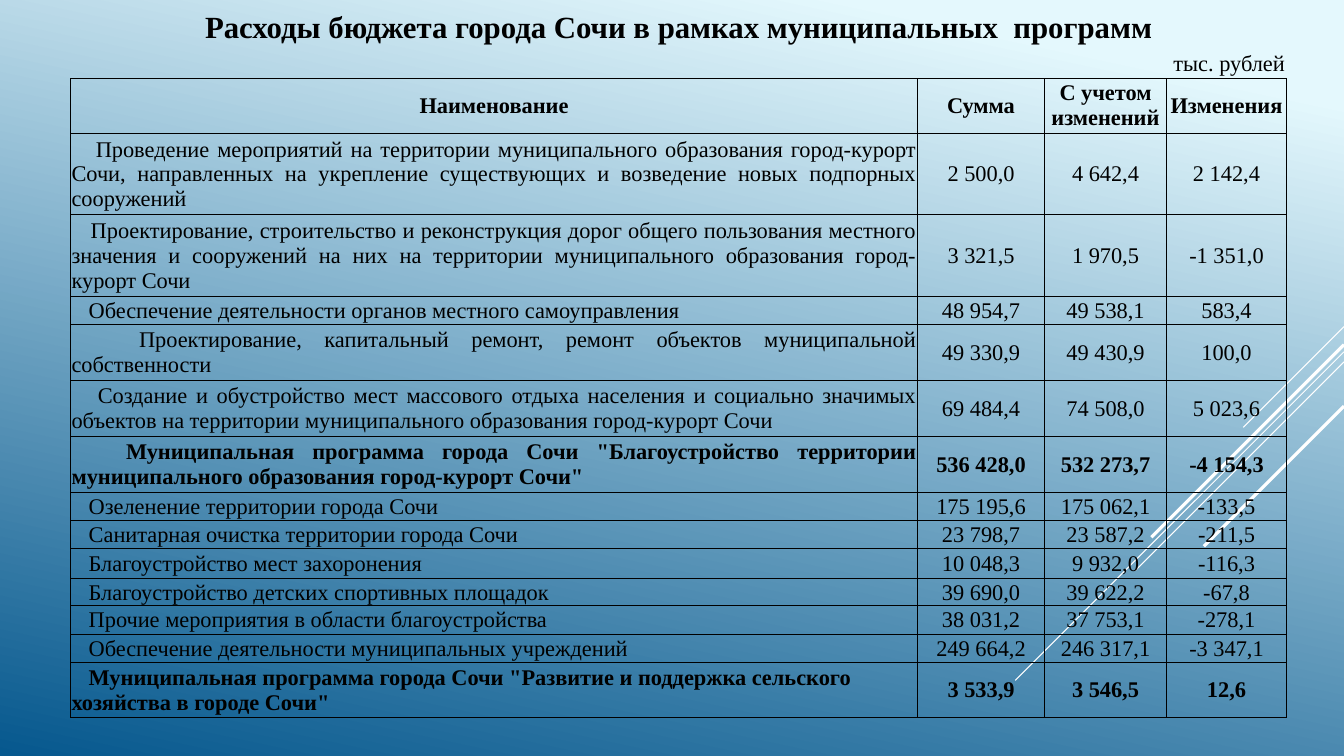
from lxml.etree import SubElement
from pptx import Presentation
from pptx.dml.color import RGBColor
from pptx.enum.shapes import MSO_CONNECTOR
from pptx.enum.text import MSO_ANCHOR, MSO_AUTO_SIZE, PP_ALIGN
from pptx.oxml import parse_xml
from pptx.oxml.ns import nsdecls, qn
from pptx.util import Inches, Pt

PAGE_WIDTH, PAGE_HEIGHT = 13.33, 7.5
FONT = "Times New Roman"
BLACK, WHITE = "000000", "FFFFFF"
LEFT, CENTER, JUSTIFY = PP_ALIGN.LEFT, PP_ALIGN.CENTER, PP_ALIGN.JUSTIFY

# Diagonal streaks: start height on the right edge, run, line width
STREAKS = [(3.24, 1, 0.75), (3.49, 3.26, 0.75), (3.59, 2.07, 0.75),
           (3.42, 1.91, 2.25), (4.03, 1.39, 2.25)]

COLUMN_WIDTHS = [8.4, 1.26, 1.21, 1.19]
HEADERS = ["Наименование", "Сумма", "С учетом изменений", "Изменения"]

# Row height, first-line indent, alignment, bold, cell texts
ROWS = [
    (0.81, 0.24, JUSTIFY, False, [
        "Проведение мероприятий на территории муниципального образования город-курорт "
        "Сочи, направленных на укрепление существующих и возведение новых подпорных "
        "сооружений", "2 500,0", "4 642,4", "2 142,4"]),
    (0.81, 0.19, JUSTIFY, False, [
        "Проектирование, строительство и реконструкция дорог общего пользования местного "
        "значения и сооружений на них на территории муниципального образования "
        "город-курорт Сочи", "3 321,5", "1 970,5", "-1 351,0"]),
    (0.28, 0.17, JUSTIFY, False, [
        "Обеспечение деятельности органов местного самоуправления",
        "48 954,7", "49 538,1", "583,4"]),
    (0.55, 0.67, JUSTIFY, False, [
        "Проектирование, капитальный ремонт, ремонт объектов муниципальной собственности",
        "49 330,9", "49 430,9", "100,0"]),
    (0.56, 0.26, JUSTIFY, False, [
        "Создание и обустройство мест массового отдыха населения и социально значимых "
        "объектов на территории муниципального образования город-курорт Сочи",
        "69 484,4", "74 508,0", "5 023,6"]),
    (0.55, 0.54, JUSTIFY, True, [
        "Муниципальная программа города Сочи \"Благоустройство территории "
        "муниципального образования город-курорт Сочи\"",
        "536 428,0", "532 273,7", "-4 154,3"]),
    (0.28, 0.17, JUSTIFY, False, [
        "Озеленение территории города Сочи", "175 195,6", "175 062,1", "-133,5"]),
    (0.28, 0.17, JUSTIFY, False, [
        "Санитарная очистка территории города Сочи", "23 798,7", "23 587,2", "-211,5"]),
    (0.3, 0.17, JUSTIFY, False, [
        "Благоустройство мест захоронения", "10 048,3", "9 932,0", "-116,3"]),
    (0.27, 0.17, JUSTIFY, False, [
        "Благоустройство детских спортивных площадок",
        "39 690,0", "39 622,2", "-67,8"]),
    (0.28, 0.17, JUSTIFY, False, [
        "Прочие мероприятия в области благоустройства",
        "38 031,2", "37 753,1", "-278,1"]),
    (0.28, 0.17, LEFT, False, [
        "Обеспечение деятельности муниципальных учреждений",
        "249 664,2", "246 317,1", "-3 347,1"]),
    (0.55, 0.17, LEFT, True, [
        "Муниципальная программа города Сочи \"Развитие и поддержка сельского "
        "хозяйства в городе Сочи\"", "3 533,9", "3 546,5", "12,6"]),
]


def set_color(target, color):
    target.rgb = RGBColor.from_string(color)


def write(frame, text, size=16, bold=False, align=LEFT):
    frame.text = text
    para = frame.paragraphs[0]
    para.alignment = align
    for span in para.runs:
        span.font.name = FONT
        span.font.size = Pt(size)
        span.font.bold = bold
        set_color(span.font.color, BLACK)
    return para


def paint_background(page):
    fill = page.background.fill
    fill.gradient()
    fill.gradient_angle = 360 - 102
    for stop, position, color in zip(fill.gradient_stops, (0.1, 1), ("E4F8FD", "06588E")):
        stop.position = position
        set_color(stop.color, color)


def add_streak(page, top, run, width):
    streak = page.shapes.add_connector(
        MSO_CONNECTOR.STRAIGHT, Inches(PAGE_WIDTH), Inches(top),
        Inches(PAGE_WIDTH - run), Inches(top + run))
    set_color(streak.line.color, WHITE)
    streak.line.width = Pt(width)
    SubElement(streak.element.spPr, qn("a:effectLst"))


def add_title(page, text):
    title = page.shapes.title
    title.left, title.top = Inches(1.92), Inches(0.02)
    title.width, title.height = Inches(9.62), Inches(0.47)
    write(title.text_frame, text, 22, True, CENTER)
    title.text_frame.auto_size = MSO_AUTO_SIZE.NONE


def add_unit_label(page, text):
    box = page.shapes.add_textbox(Inches(11.54), Inches(0.44), Inches(1.51), Inches(0.37))
    box.text_frame.word_wrap = True
    write(box.text_frame, text)


def add_borders(cell):
    properties = cell._tc.get_or_add_tcPr()
    for position, side in enumerate(("lnL", "lnR", "lnT", "lnB")):
        properties.insert(position, parse_xml(
            f'<a:{side} {nsdecls("a")} w="{Pt(0.5)}"><a:solidFill>'
            f'<a:srgbClr val="{BLACK}"/></a:solidFill></a:{side}>'))


def fill_cell(cell, text, bold, align, inset, indent=0):
    cell.fill.background()
    cell.vertical_anchor = MSO_ANCHOR.MIDDLE
    cell.margin_left = cell.margin_right = cell.margin_top = Inches(inset)
    cell.margin_bottom = 0
    para = write(cell.text_frame, text, bold=bold, align=align)
    if indent:
        para._p.get_or_add_pPr().set("indent", str(Inches(indent)))
    add_borders(cell)


def add_budget_table(page):
    heights = [0.54] + [row[0] for row in ROWS]
    table = page.shapes.add_table(
        len(heights), len(COLUMN_WIDTHS), Inches(0.7), Inches(0.78),
        Inches(sum(COLUMN_WIDTHS)), Inches(sum(heights))).table
    table.first_row = table.horz_banding = False
    for column, width in zip(table.columns, COLUMN_WIDTHS):
        column.width = Inches(width)
    for row, height in zip(table.rows, heights):
        row.height = Inches(height)

    # Header row
    for column, text in enumerate(HEADERS):
        fill_cell(table.cell(0, column), text, True, CENTER, 0)

    # Programme names and amounts
    for row, (_, indent, align, bold, texts) in enumerate(ROWS, 1):
        name, *amounts = texts
        fill_cell(table.cell(row, 0), name, bold, align, 0.01, indent)
        for column, amount in enumerate(amounts, 1):
            fill_cell(table.cell(row, column), amount, bold, CENTER, 0.01)


def main():
    deck = Presentation()
    deck.slide_width, deck.slide_height = Inches(PAGE_WIDTH), Inches(PAGE_HEIGHT)
    page = deck.slides.add_slide(deck.slide_layouts[5])

    # Backdrop
    paint_background(page)
    for streak in STREAKS:
        add_streak(page, *streak)

    # Content
    add_title(page, "Расходы бюджета города Сочи в рамках муниципальных  программ")
    add_budget_table(page)
    add_unit_label(page, "тыс. рублей")
    deck.save("out.pptx")


if __name__ == "__main__":
    main()
